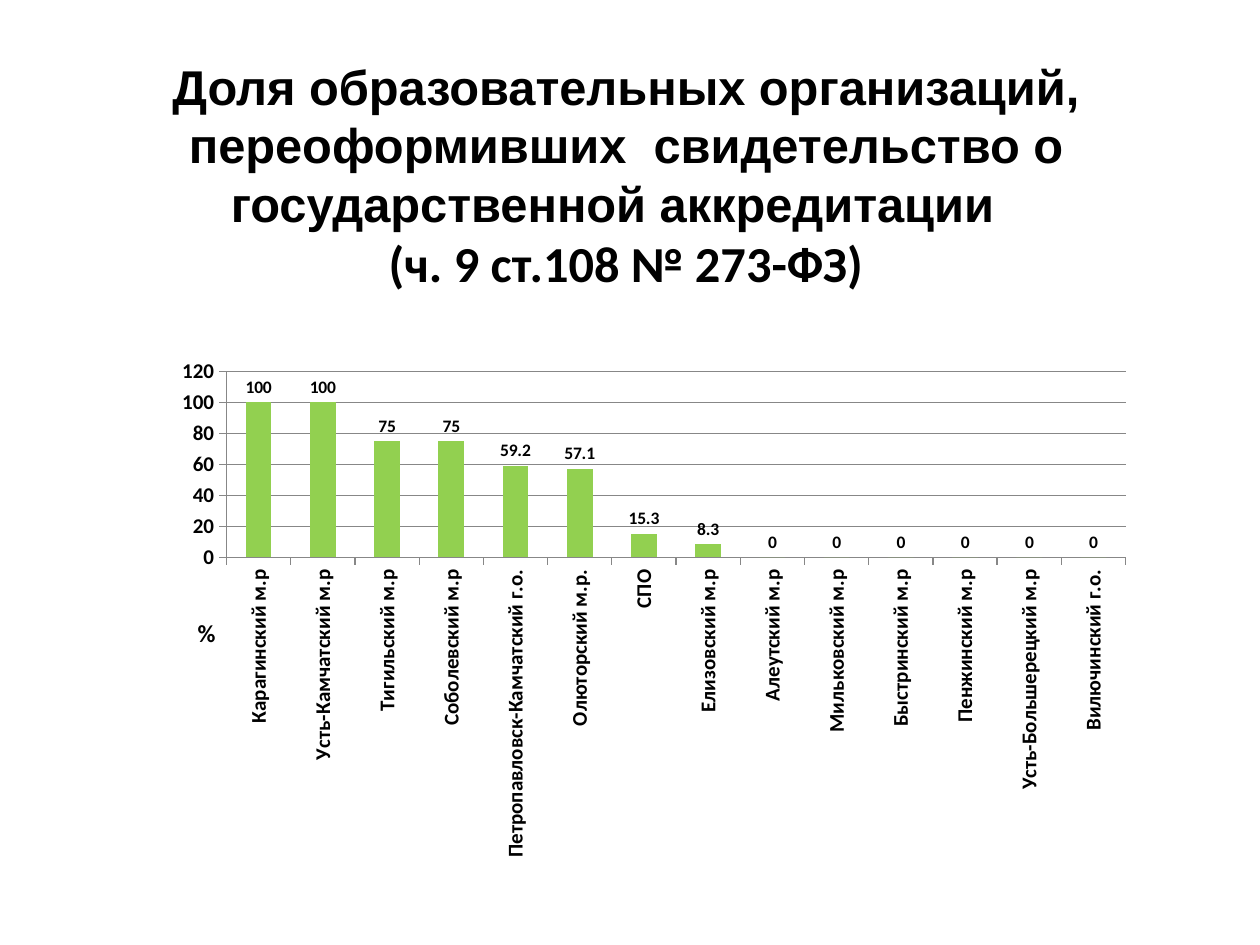
from pptx import Presentation
from pptx.chart.data import CategoryChartData
from pptx.dml.color import RGBColor
from pptx.enum.chart import XL_CHART_TYPE, XL_LABEL_POSITION, XL_TICK_MARK
from pptx.enum.text import MSO_ANCHOR, MSO_AUTO_SIZE, PP_ALIGN
from pptx.oxml import parse_xml
from pptx.oxml.ns import nsdecls
from pptx.util import Cm, Pt

BLACK = RGBColor(0x00, 0x00, 0x00)
GREEN = RGBColor(0x92, 0xD0, 0x50)
GRAY = RGBColor(0x87, 0x87, 0x87)

SHARES = {
    "Карагинский м.р": 100,
    "Усть-Камчатский м.р": 100,
    "Тигильский м.р": 75,
    "Соболевский м.р": 75,
    "Петропавловск-Камчатский г.о.": 59.2,
    "Олюторский м.р.": 57.1,
    "СПО": 15.3,
    "Елизовский м.р": 8.3,
    "Алеутский м.р": 0,
    "Мильковский м.р": 0,
    "Быстринский м.р": 0,
    "Пенжинский м.р": 0,
    "Усть-Большерецкий м.р": 0,
    "Вилючинский г.о.": 0,
}


def format_font(font, size, name="Calibri", bold=True, color=BLACK):
    font.name = name
    font.size = Pt(size)
    font.bold = bold
    font.color.rgb = color


def add_text(paragraph, text, **font_format):
    run = paragraph.add_run()
    run.text = text
    format_font(run.font, **font_format)


def set_layout(parent, **places):
    """Place a chart part by fractions of the chart area."""
    for old_layout in parent.xpath("c:layout"):
        parent.remove(old_layout)
    target = '<c:layoutTarget val="inner"/>' if "w" in places else ""
    modes = "".join(f'<c:{key}Mode val="edge"/>' for key in "xy")
    values = "".join(f'<c:{key} val="{value}"/>' for key, value in places.items())
    layout = parse_xml(
        f'<c:layout {nsdecls("c")}><c:manualLayout>{target}{modes}{values}'
        "</c:manualLayout></c:layout>"
    )
    text_parts = parent.xpath("c:tx")
    if text_parts:
        text_parts[0].addnext(layout)
    else:
        parent.insert(0, layout)


class SlideBuilder:
    def __init__(self, slide):
        self.slide = slide
        self.bar_color = GREEN
        self.line_color = GRAY

    def title(self, left, top, width, height, lines):
        shape = self.slide.shapes.title
        shape.left, shape.top = Cm(left), Cm(top)
        shape.width, shape.height = Cm(width), Cm(height)
        frame = shape.text_frame
        frame.word_wrap = True
        frame.auto_size = MSO_AUTO_SIZE.NONE
        frame.vertical_anchor = MSO_ANCHOR.MIDDLE
        paragraph = frame.paragraphs[0]
        paragraph.alignment = PP_ALIGN.CENTER
        for index, (text, font_format) in enumerate(lines):
            if index:
                paragraph.add_line_break()
            add_text(paragraph, text, **font_format)

    def column_chart(self, left, top, width, height, name, shares):
        data = CategoryChartData(number_format="General")
        data.categories = list(shares)
        data.add_series(name, list(shares.values()))
        chart = self.slide.shapes.add_chart(
            XL_CHART_TYPE.COLUMN_CLUSTERED,
            Cm(left), Cm(top), Cm(width), Cm(height), data,
        ).chart
        chart.has_legend = False
        format_font(chart.font, size=10, bold=False)

        # Unit label to the left of the categories
        chart.has_title = True
        title = chart.chart_title
        add_text(title.text_frame.paragraphs[0], name, size=14)
        title.include_in_layout = False
        set_layout(chart.element.xpath("c:chart/c:title")[0], x=0.03, y=0.56)
        set_layout(chart.element.xpath(".//c:plotArea")[0],
                   x=0.064, y=0.15, w=0.915, h=0.317)

        # Columns and their values
        plot = chart.plots[0]
        plot.gap_width = 150
        plot.vary_by_categories = False
        fill = plot.series[0].format.fill
        fill.solid()
        fill.fore_color.rgb = self.bar_color
        plot.has_data_labels = True
        labels = plot.data_labels
        labels.show_value = True
        labels.position = XL_LABEL_POSITION.OUTSIDE_END
        format_font(labels.font, size=10)

        # Axes
        for axis in (chart.category_axis, chart.value_axis):
            axis.major_tick_mark = XL_TICK_MARK.OUTSIDE
            axis.minor_tick_mark = XL_TICK_MARK.NONE
            self.line(axis.format.line)
            format_font(axis.tick_labels.font, size=12)
        value_axis = chart.value_axis
        value_axis.minimum_scale, value_axis.maximum_scale = 0, 120
        value_axis.major_unit = 20
        value_axis.has_major_gridlines = True
        self.line(value_axis.major_gridlines.format.line)
        body = chart.element.xpath(".//c:catAx/c:txPr/a:bodyPr")[0]
        body.set("rot", "-5400000")
        body.set("vert", "horz")

    def line(self, line):
        line.color.rgb = self.line_color
        line.width = Pt(0.75)


def main():
    presentation = Presentation()
    presentation.slide_width, presentation.slide_height = Cm(25.4), Cm(19.05)
    title_only = presentation.slide_layouts[5]
    builder = SlideBuilder(presentation.slides.add_slide(title_only))

    builder.title(1.09, 1.52, 23.06, 3.99, [
        ("Доля образовательных организаций, переоформивших  свидетельство о "
         "государственной аккредитации  ", {"size": 27.9, "name": "Arial"}),
        ("(ч. 9 ст.108 № 273-ФЗ)", {"size": 28.8}),
    ])
    builder.column_chart(3.3, 5.72, 19.81, 11.81, "%", SHARES)

    presentation.save("out.pptx")


if __name__ == "__main__":
    main()
